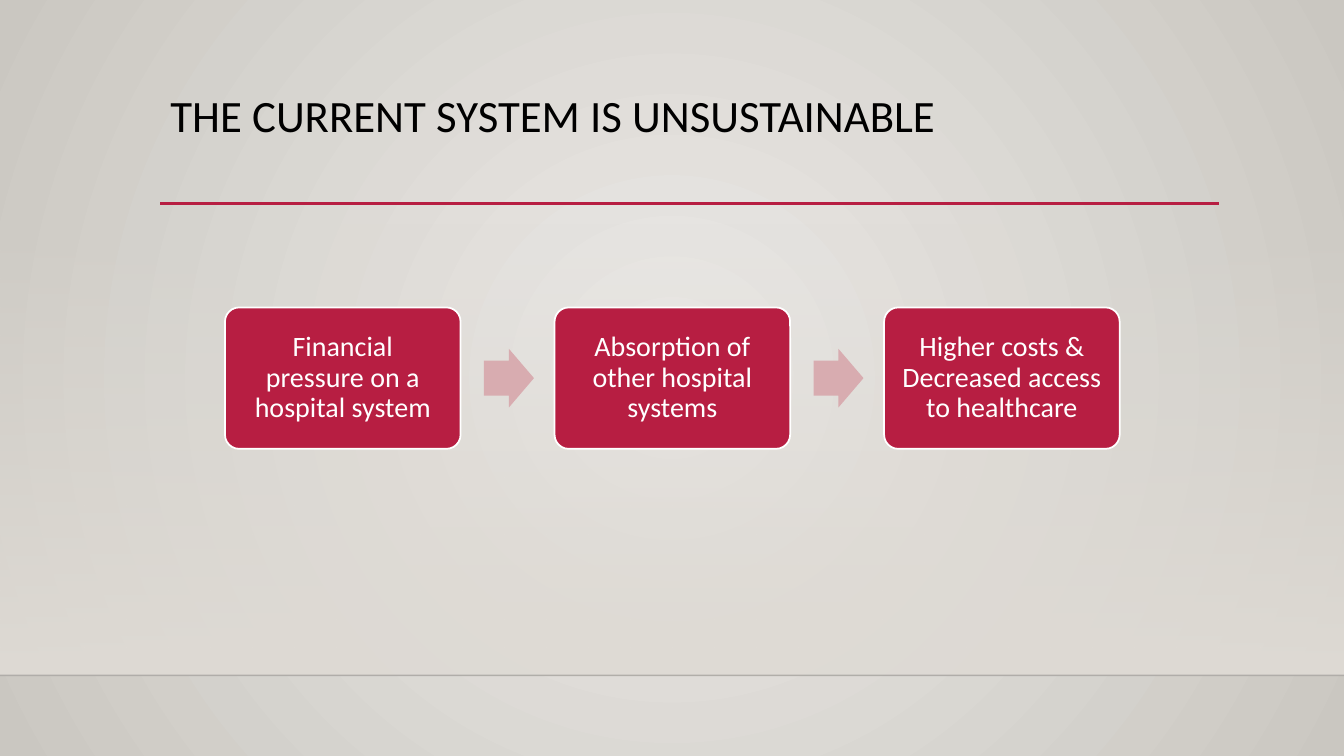
from lxml import etree
from pptx import Presentation
from pptx.dml.color import RGBColor
from pptx.enum.shapes import MSO_CONNECTOR, MSO_SHAPE
from pptx.enum.text import MSO_ANCHOR, MSO_AUTO_SIZE, PP_ALIGN
from pptx.oxml.ns import qn
from pptx.util import Pt

STRAIGHT = MSO_CONNECTOR.STRAIGHT
RECTANGLE, ROUNDED, ARROW = MSO_SHAPE.RECTANGLE, MSO_SHAPE.ROUNDED_RECTANGLE, MSO_SHAPE.RIGHT_ARROW
TOP, MIDDLE = MSO_ANCHOR.TOP, MSO_ANCHOR.MIDDLE
LEFT, CENTER = PP_ALIGN.LEFT, PP_ALIGN.CENTER
NO_AUTOFIT = MSO_AUTO_SIZE.NONE

COLORS = {
    "glow": "ECEAE7",
    "edge": "CAC7C1",
    "wall": "DFDBD5",
    "floor": "000001",
    "accent": "B71E42",
    "arrow": "D8ACB0",
    "black": "000000",
    "white": "FFFFFF",
}
FONT = "Calibri"
WIDTH, HEIGHT = 960, 540
FLOOR_TOP = 482.4
STEPS = [
    "Financial pressure on a hospital system",
    "Absorption of other hospital systems",
    "Higher costs & Decreased access to healthcare",
]
STEP_LEFT, STEP_TOP, STEP_WIDTH, STEP_HEIGHT = 160.7, 219.6, 168.3, 101
STEP_PITCH = 235.4
ARROW_WIDTH, ARROW_HEIGHT, ARROW_OFFSET = 35.7, 41.8, 185


def color(name):
    return RGBColor.from_string(COLORS[name])


def set_alpha(element, percent):
    alpha = etree.SubElement(element.xpath(".//a:srgbClr")[0], qn("a:alpha"))
    alpha.set("val", str(percent * 1000))


def set_gradient(fill, start, end):
    fill.gradient()
    for stop, name in zip(fill.gradient_stops, (start, end)):
        stop.color.rgb = color(name)


def set_background(page):
    set_gradient(page.background.fill, "glow", "edge")
    gradient = page.element.xpath(".//p:bg//a:gradFill")[0]
    gradient.remove(gradient.find(qn("a:lin")))
    circle = etree.SubElement(gradient, qn("a:path"), {"path": "circle"})
    center = dict.fromkeys("ltrb", "50000")
    etree.SubElement(circle, qn("a:fillToRect"), center)


def add_wall(page):
    top = 159.1
    wall = page.shapes.add_shape(RECTANGLE, 0, Pt(top), Pt(WIDTH), Pt(FLOOR_TOP - top))
    wall.shadow.inherit = False
    wall.line.fill.background()
    set_gradient(wall.fill, "wall", "wall")
    wall.fill.gradient_angle = 270
    set_alpha(wall.element, 0)


def add_rule(page, left, right, top, name, weight, alpha=None):
    rule = page.shapes.add_connector(STRAIGHT, Pt(left), Pt(top), Pt(right), Pt(top))
    rule.line.color.rgb = color(name)
    rule.line.width = Pt(weight)
    if alpha is not None:
        set_alpha(rule.element, alpha)
    etree.SubElement(rule.element.spPr, qn("a:effectLst"))


def write(box, text, size, name, align=LEFT, anchor=TOP, margins=(7.2, 3.6)):
    frame = box.text_frame
    frame.auto_size = NO_AUTOFIT
    frame.word_wrap = True
    frame.vertical_anchor = anchor
    frame.margin_left = frame.margin_right = Pt(margins[0])
    frame.margin_top = frame.margin_bottom = Pt(margins[1])
    para = frame.paragraphs[0]
    para.alignment = align
    para.line_spacing = 0.9
    span = para.add_run()
    span.text = text
    span.font.name = FONT
    span.font.size = Pt(size)
    span.font.color.rgb = color(name)


def add_title(page, text):
    title = page.shapes.title
    title.left, title.top, title.width, title.height = Pt(114.5), Pt(63.4), Pt(756), Pt(82.8)
    write(title, text, 32, "black")


def add_step(page, left, text):
    box = page.shapes.add_shape(ROUNDED, Pt(left), Pt(STEP_TOP), Pt(STEP_WIDTH), Pt(STEP_HEIGHT))
    box.adjustments[0] = 0.1
    box.shadow.inherit = False
    box.fill.solid()
    box.fill.fore_color.rgb = color("accent")
    box.line.color.rgb = color("white")
    box.line.width = Pt(1.25)
    write(box, text, 20, "white", align=CENTER, anchor=MIDDLE, margins=(8.9, 8.9))


def add_arrow(page, left):
    top = STEP_TOP + (STEP_HEIGHT - ARROW_HEIGHT) / 2
    arrow = page.shapes.add_shape(ARROW, Pt(left), Pt(top), Pt(ARROW_WIDTH), Pt(ARROW_HEIGHT))
    arrow.adjustments[0] = 0.6
    arrow.adjustments[1] = 0.5
    arrow.shadow.inherit = False
    arrow.fill.solid()
    arrow.fill.fore_color.rgb = color("arrow")
    arrow.line.fill.background()


def main():
    deck = Presentation()
    deck.slide_width, deck.slide_height = Pt(WIDTH), Pt(HEIGHT)
    page = deck.slides.add_slide(deck.slide_layouts[5])
    set_background(page)
    add_wall(page)
    add_rule(page, 0, WIDTH, FLOOR_TOP, "floor", 1, alpha=20)
    add_rule(page, 114.5, 871, 145.3, "accent", 2.5)
    add_title(page, "THE CURRENT SYSTEM IS UNSUSTAINABLE")
    for index, text in enumerate(STEPS):
        left = STEP_LEFT + index * STEP_PITCH
        if index:
            add_arrow(page, left - STEP_PITCH + ARROW_OFFSET)
        add_step(page, left, text)
    deck.save("out.pptx")


if __name__ == "__main__":
    main()
